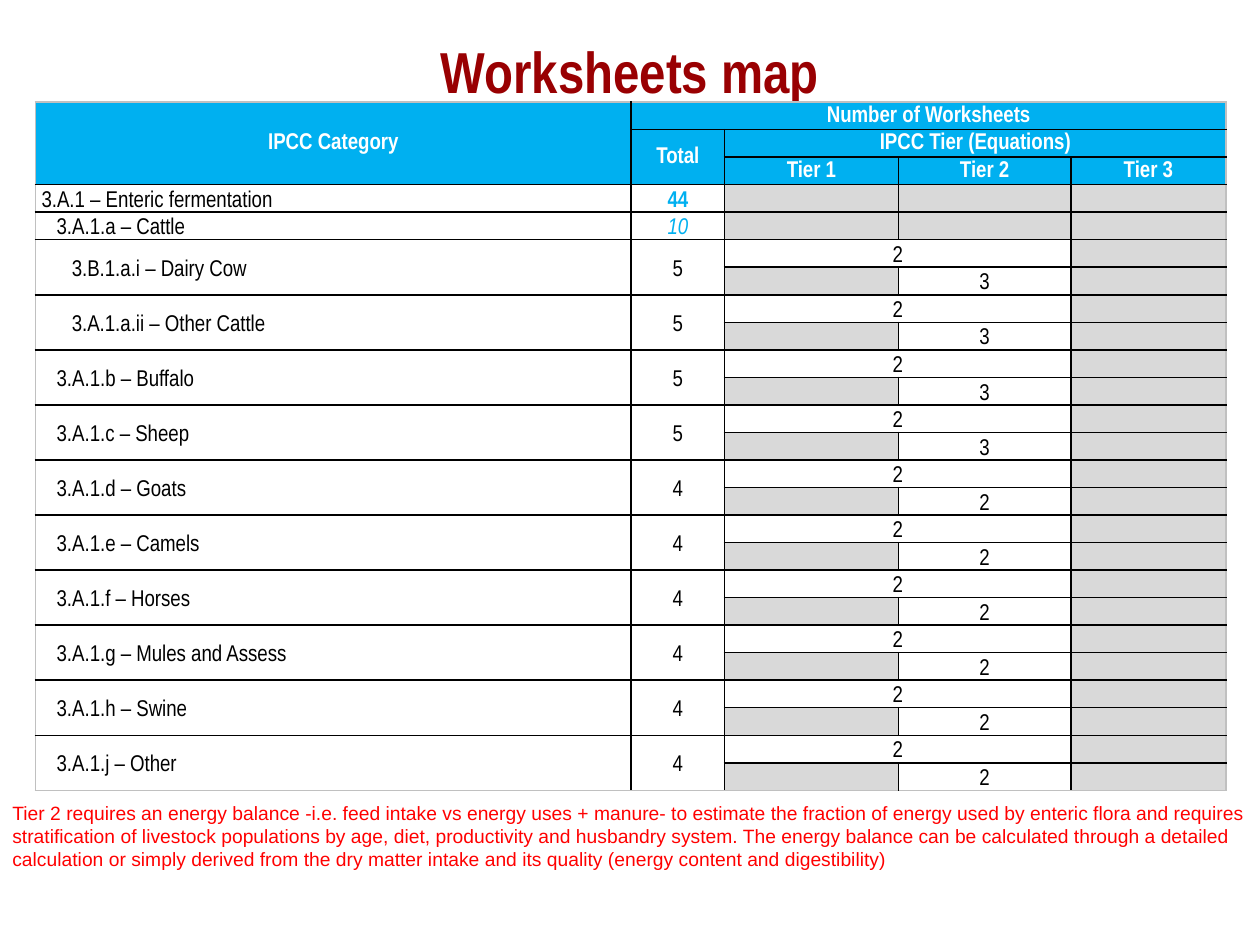
from lxml.etree import SubElement
from pptx import Presentation
from pptx.dml.color import RGBColor
from pptx.enum.text import MSO_ANCHOR, MSO_AUTO_SIZE, PP_ALIGN
from pptx.oxml.ns import qn
from pptx.util import Inches, Pt

MAROON = RGBColor(0x99, 0x00, 0x02)
RED = RGBColor(0xFF, 0x00, 0x00)
BLACK = RGBColor(0x00, 0x00, 0x00)
WHITE = RGBColor(0xFF, 0xFF, 0xFF)
BLUE = RGBColor(0x00, 0xB0, 0xF0)
GREY = RGBColor(0xD9, 0xD9, 0xD9)
EDGE = RGBColor(0xC0, 0xC0, 0xC0)

COLUMN_WIDTHS = [4.73, 0.74, 1.38, 1.37, 1.23]
HEADERS = [
    (0, 0, 3, 1, "IPCC Category"),
    (0, 1, 1, 4, "Number of Worksheets"),
    (1, 1, 2, 1, "Total"),
    (1, 2, 1, 3, "IPCC Tier (Equations)"),
    (2, 2, 1, 1, "Tier 1"),
    (2, 3, 1, 1, "Tier 2"),
    (2, 4, 1, 1, "Tier 3"),
]
CATEGORIES = [
    ("3.B.1.a.i – Dairy Cow", 2, 2, 3),
    ("3.A.1.a.ii – Other Cattle", 2, 2, 3),
    ("3.A.1.b – Buffalo", 1, 2, 3),
    ("3.A.1.c – Sheep", 1, 2, 3),
    ("3.A.1.d – Goats", 1, 2, 2),
    ("3.A.1.e – Camels", 1, 2, 2),
    ("3.A.1.f – Horses", 1, 2, 2),
    ("3.A.1.g – Mules and Assess", 1, 2, 2),
    ("3.A.1.h – Swine", 1, 2, 2),
    ("3.A.1.j – Other", 1, 2, 2),
]
FIRST_CATEGORY_ROW = 5
ROW_COUNT = FIRST_CATEGORY_ROW + 2 * len(CATEGORIES)
COLUMN_COUNT = len(COLUMN_WIDTHS)
NOTE = (
    "Tier 2 requires an energy balance -i.e. feed intake vs energy uses + manure- "
    "to estimate the fraction of energy used by enteric flora and requires "
    "stratification of livestock populations by age, diet, productivity and "
    "husbandry system. The energy balance can be calculated through a detailed "
    "calculation or simply derived from the dry matter intake and its quality "
    "(energy content and digestibility)"
)


def add_span(para, text, size, font, color, bold=False, italic=False):
    """Add one formatted run to a paragraph."""
    span = para.add_run()
    span.text = text
    span.font.size = Pt(size)
    span.font.name = font
    span.font.color.rgb = color
    span.font.bold = bold
    span.font.italic = italic


def set_borders(cell, colors):
    """Draw the left, right, top and bottom borders of a cell."""
    properties = cell._tc.get_or_add_tcPr()
    for position, (side, color) in enumerate(zip(("lnL", "lnR", "lnT", "lnB"), colors)):
        line = SubElement(properties, qn(f"a:{side}"), w=str(Pt(1)))
        fill = SubElement(line, qn("a:solidFill"))
        SubElement(fill, qn("a:srgbClr"), val=str(color))
        properties.insert(position, line)


def fill_cell(cell, color):
    """Give a cell a solid fill."""
    cell.fill.solid()
    cell.fill.fore_color.rgb = color


def write_cell(cell, text, color=BLACK, bold=False, italic=False, level=None):
    """Write centred text, or left text indented by its category level."""
    para = cell.text_frame.paragraphs[0]
    if level is None:
        para.alignment = PP_ALIGN.CENTER
    else:
        para.alignment = PP_ALIGN.LEFT
        cell.margin_left = Inches(0.05 + 0.12 * level)
    add_span(para, text, 13, "Arial Narrow", color, bold, italic)


def prepare_cells(table):
    """Set margins, line height and plain fill throughout the table."""
    for row in range(ROW_COUNT):
        for column in range(COLUMN_COUNT):
            cell = table.cell(row, column)
            cell.margin_left = cell.margin_right = cell.margin_top = Inches(0.01)
            cell.margin_bottom = 0
            cell.vertical_anchor = MSO_ANCHOR.MIDDLE
            para = cell.text_frame.paragraphs[0]
            para.font.size = Pt(8)
            if row >= 3:
                para.line_spacing = Pt(15)
            cell.fill.background()


def add_borders(table):
    """Draw black inner borders and a light outer edge."""
    for row in range(ROW_COUNT):
        for column in range(COLUMN_COUNT):
            cell = table.cell(row, column)
            height = cell.span_height if cell.is_merge_origin else 1
            width = cell.span_width if cell.is_merge_origin else 1
            outer = (
                column == 0,
                column + width == COLUMN_COUNT,
                row == 0,
                row + height == ROW_COUNT,
            )
            set_borders(cell, [EDGE if edge else BLACK for edge in outer])


def add_header(table):
    """Fill the three header rows."""
    for row, column, height, width, text in HEADERS:
        cell = table.cell(row, column)
        if height * width > 1:
            cell.merge(table.cell(row + height - 1, column + width - 1))
        fill_cell(cell, BLUE)
        write_cell(cell, text, WHITE, bold=True)


def add_summary(table):
    """Fill the two rows of totals."""
    write_cell(table.cell(3, 0), "3.A.1 – Enteric fermentation", level=0)
    write_cell(table.cell(3, 1), "44", BLUE, bold=True)
    write_cell(table.cell(4, 0), "3.A.1.a – Cattle", level=1)
    write_cell(table.cell(4, 1), "10", BLUE, italic=True)
    for row in (3, 4):
        for column in (2, 3, 4):
            fill_cell(table.cell(row, column), GREY)


def add_category(table, row, name, level, shared, tier_two):
    """Fill the pair of rows that belongs to one category."""
    for column in (0, 1):
        table.cell(row, column).merge(table.cell(row + 1, column))
    table.cell(row, 2).merge(table.cell(row, 3))
    write_cell(table.cell(row, 0), name, level=level)
    write_cell(table.cell(row, 1), str(shared + tier_two))
    write_cell(table.cell(row, 2), str(shared))
    write_cell(table.cell(row + 1, 3), str(tier_two))
    for unused in ((row, 4), (row + 1, 2), (row + 1, 4)):
        fill_cell(table.cell(*unused), GREY)


def add_worksheet_table(page):
    """Add the table of worksheets per category and tier."""
    frame = page.shapes.add_table(
        ROW_COUNT, COLUMN_COUNT, Inches(0.28), Inches(0.81), Inches(9.45), Inches(5.47)
    )
    table = frame.table
    table.first_row = table.horz_banding = False
    for column, width in zip(table.columns, COLUMN_WIDTHS):
        column.width = Inches(width)
    prepare_cells(table)
    add_header(table)
    add_summary(table)
    for index, category in enumerate(CATEGORIES):
        add_category(table, FIRST_CATEGORY_ROW + 2 * index, *category)
    add_borders(table)


def add_title(page):
    """Place and format the title."""
    title = page.shapes.title
    title.left, title.top = 0, Inches(0.25)
    title.width, title.height = Inches(10), Inches(0.61)
    title.text_frame.auto_size = MSO_AUTO_SIZE.NONE
    title.text_frame.vertical_anchor = MSO_ANCHOR.MIDDLE
    para = title.text_frame.paragraphs[0]
    para.alignment = PP_ALIGN.CENTER
    add_span(para, "Worksheets map", 33, "Arial Narrow", MAROON, bold=True)


def add_note(page):
    """Add the note under the table."""
    box = page.shapes.add_textbox(0, Inches(6.31), Inches(10), Inches(0.66))
    box.text_frame.word_wrap = True
    add_span(box.text_frame.paragraphs[0], NOTE, 11, "Arial", RED)


def main():
    """Build and save the deck."""
    deck = Presentation()
    deck.slide_width, deck.slide_height = Inches(10), Inches(7.5)
    page = deck.slides.add_slide(deck.slide_layouts[5])
    add_title(page)
    add_worksheet_table(page)
    add_note(page)
    deck.save("out.pptx")


if __name__ == "__main__":
    main()
